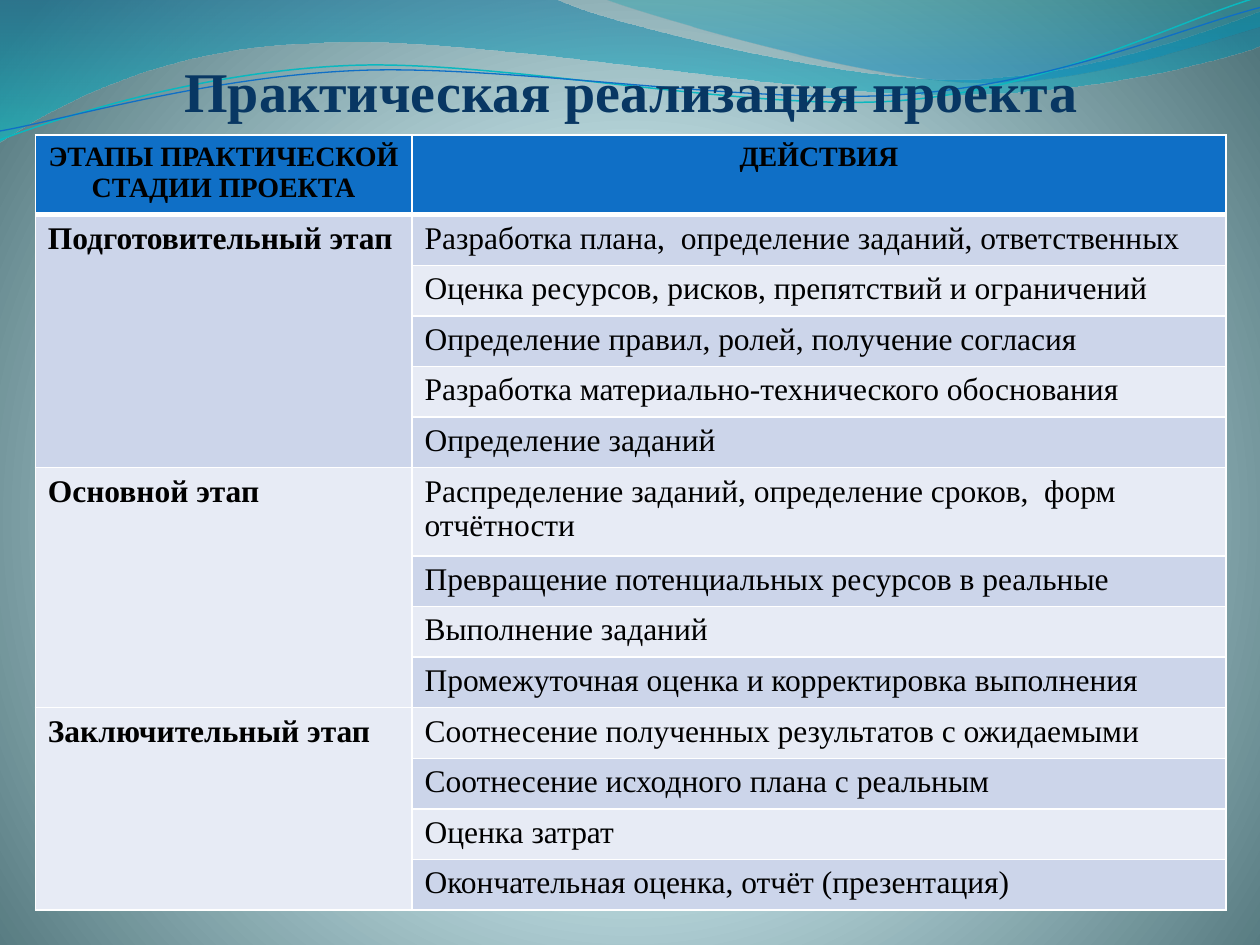
"""Build a slide with a table of project stages over a waved backdrop."""
from math import cos, radians, sin

from lxml import etree
from pptx import Presentation
from pptx.dml.color import RGBColor
from pptx.enum.text import MSO_ANCHOR, PP_ALIGN
from pptx.oxml import parse_xml
from pptx.oxml.ns import nsdecls, qn
from pptx.util import Inches, Pt

CENTER, LEFT = PP_ALIGN.CENTER, PP_ALIGN.LEFT
BOTTOM = MSO_ANCHOR.BOTTOM

TITLE = "Практическая реализация проекта"
HEADS = ("ЭТАПЫ ПРАКТИЧЕСКОЙ СТАДИИ ПРОЕКТА", "ДЕЙСТВИЯ")
STAGES = {
    "Подготовительный этап": (
        "Разработка плана,  определение заданий, ответственных",
        "Оценка ресурсов, рисков, препятствий и ограничений",
        "Определение правил, ролей, получение согласия",
        "Разработка материально-технического обоснования",
        "Определение заданий",
    ),
    "Основной этап": (
        "Распределение заданий, определение сроков,  форм отчётности",
        "Превращение потенциальных ресурсов в реальные",
        "Выполнение заданий",
        "Промежуточная оценка и корректировка выполнения",
    ),
    "Заключительный этап": (
        "Соотнесение полученных результатов с ожидаемыми",
        "Соотнесение исходного плана с реальным",
        "Оценка затрат",
        "Окончательная оценка, отчёт (презентация)",
    ),
}
THEME = {
    "font": "Times New Roman",
    "title": {"size": Pt(32), "bold": True, "color": "083763"},
    "head": {"size": Pt(16), "bold": True, "color": "000000"},
    "stage": {"size": Pt(18), "bold": True, "color": "000000"},
    "task": {"size": Pt(18), "bold": False, "color": "000000"},
    "fill": "0F6FC6",
    "bands": ("E7EBF5", "CCD5EA"),
    "rule": "FFFFFF",
    "back": ((0, "DEFBFF", 100), (25, "DDFAFF", 100), (100, "52767C", 100)),
}
WAVES = (
    {"start": (0, 0),
     "steps": ((4.4, -0.01), (4.76, 0.17, 6.64, 0.63, 7.58, 0.63),
               (8.53, 0.63, 9.58, 0.26, 10, 0.09), (10.01, 0.36),
               (9.83, 0.44, 8.7, 0.76, 7.46, 0.75),
               (6.22, 0.75, 3.82, 0.28, 2.57, 0.34),
               (1.29, 0.36, 0.46, 0.83, -0.01, 1.13), (0, 0)),
     "stops": ((0, "0074A1", 45), (100, "00C6CF", 55))},
    {"start": (4.79, -0.01),
     "steps": ((5.09, 0.11, 6.82, 0.62, 7.69, 0.65),
               (8.56, 0.69, 9.61, 0.32, 10, 0.21), (10, 0), (4.79, -0.01)),
     "stops": ((0, "00A1A9", 30), (80, "008BBF", 45))},
    {"start": (0, 1.11),
     "steps": ((0.48, 0.93, 1.58, 0.57, 2.77, 0.52),
               (3.95, 0.47, 5.93, 0.89, 7.13, 0.8),
               (8.33, 0.71, 9.38, 0.15, 9.98, -0.02)),
     "line": ("0AB8BF", 0.85), "hub": (4.99, 0.58)},
    {"start": (0, 1.04),
     "steps": ((0.47, 0.96, 1.64, 0.61, 2.83, 0.56),
               (4.03, 0.51, 5.97, 0.84, 7.17, 0.75),
               (8.36, 0.67, 9.41, 0.21, 10, 0.06)),
     "line": ("0F6FC6", 0.75), "hub": (5, 0.59)},
)
TILT = -2.7
COLS = (2.99, 6.46)
HEAD, TALL, FULL = 0.63, 0.7, 6.15
LINEAR = '<a:lin %s ang="5400000" scaled="0"/>' % nsdecls("a")
ROUND = ('<a:path %s path="circle"><a:fillToRect l="10000" t="110000" '
         'r="10000" b="100000"/></a:path>' % nsdecls("a"))


def blend(owner, fill, stops, shade):
    fill.gradient()
    grad = owner.element.find(".//" + qn("a:gradFill"))
    grad.clear()
    group = etree.SubElement(grad, qn("a:gsLst"))
    for place, color, alpha in stops:
        stop = etree.SubElement(group, qn("a:gs"), pos=str(place * 1000))
        tint = etree.SubElement(stop, qn("a:srgbClr"), val=color)
        if alpha < 100:
            etree.SubElement(tint, qn("a:alpha"), val=str(alpha * 1000))
    grad.append(parse_xml(shade))


def place(step, hub):
    turn = radians(-TILT) if hub else 0
    mid = hub or (0, 0)
    spots = []
    for x, y in zip(step[::2], step[1::2]):
        dx, dy = x - mid[0], y - mid[1]
        spots.append((Inches(mid[0] + dx * cos(turn) - dy * sin(turn)),
                      Inches(mid[1] + dx * sin(turn) + dy * cos(turn))))
    return spots


def bend(shape, steps):
    for node, spots in zip(list(shape.element.iter(qn("a:lnTo"))), steps):
        if len(spots) == 3:
            curve = etree.Element(qn("a:cubicBezTo"))
            for x, y in spots:
                etree.SubElement(curve, qn("a:pt"), x=str(x - shape.left),
                                 y=str(y - shape.top))
            node.getparent().replace(node, curve)


def wave(slide, start, steps, stops=None, line=None, hub=None):
    steps = [place(step, hub) for step in steps]
    form = slide.shapes.build_freeform(*place(start, hub)[0])
    form.add_line_segments([spots[-1] for spots in steps], close=bool(stops))
    shape = form.convert_to_shape()
    shape.shadow.inherit = False
    bend(shape, steps)
    if stops:
        blend(shape, shape.fill, stops, LINEAR)
        shape.line.fill.background()
    else:
        shape.rotation = TILT
        shape.fill.background()
        shape.line.color.rgb = RGBColor.from_string(line[0])
        shape.line.width = Pt(line[1])


def write(frame, text, style, align):
    para = frame.paragraphs[0]
    para.alignment = align
    run = para.add_run()
    run.text = text
    run.font.name = THEME["font"]
    for name, value in THEME[style].items():
        if name == "color":
            run.font.color.rgb = RGBColor.from_string(value)
        else:
            setattr(run.font, name, value)


def rule(cell, row):
    props = cell.fill._xPr
    sides = {"lnL": 1, "lnR": 1, "lnT": 3 if row == 1 else 1, "lnB": 1 if row else 3}
    for i, (side, width) in enumerate(sides.items()):
        props.insert(i, parse_xml(
            f'<a:{side} {nsdecls("a")} w="{Pt(width)}"><a:solidFill>'
            f'<a:srgbClr val="{THEME["rule"]}"/></a:solidFill></a:{side}>'))


def grid(slide):
    tasks = [task for group in STAGES.values() for task in group]
    main = 1 + len(STAGES["Подготовительный этап"])
    rows = [HEAD] + [(FULL - HEAD - TALL) / (len(tasks) - 1)] * len(tasks)
    rows[main] = TALL
    table = slide.shapes.add_table(
        len(rows), len(COLS), Inches(0.28), Inches(1.07),
        Inches(sum(COLS)), Inches(FULL)).table
    for col, width in zip(table.columns, COLS):
        col.width = Inches(width)
    first, bands = 1, {}
    for stage, group in STAGES.items():
        last = first + len(group) - 1
        table.cell(first, 0).merge(table.cell(last, 0))
        write(table.cell(first, 0).text_frame, stage, "stage", LEFT)
        bands.update({r: first % 2 for r in range(first, last + 1)})
        first = last + 1
    for r, height in enumerate(rows):
        table.rows[r].height = Inches(height)
        for c in range(len(COLS)):
            cell = table.cell(r, c)
            band = r % 2 if c else bands.get(r, 0)
            tone = THEME["bands"][band] if r else THEME["fill"]
            cell.fill.solid()
            cell.fill.fore_color.rgb = RGBColor.from_string(tone)
            rule(cell, r)
            if r == 0:
                write(cell.text_frame, HEADS[c], "head", CENTER)
            elif c:
                write(cell.text_frame, tasks[r - 1], "task", LEFT)


def main():
    deck = Presentation()
    deck.slide_width, deck.slide_height = Inches(10), Inches(7.5)
    slide = deck.slides.add_slide(deck.slide_layouts[6])
    blend(slide, slide.background.fill, THEME["back"], ROUND)
    for item in WAVES:
        wave(slide, **item)
    frame = slide.shapes.add_textbox(
        Inches(0.51), Inches(0.36), Inches(9), Inches(0.62)).text_frame
    form = {"word_wrap": True, "vertical_anchor": BOTTOM, "margin_left": 0,
            "margin_top": Inches(0.05), "margin_right": 0, "margin_bottom": 0}
    for name, value in form.items():
        setattr(frame, name, value)
    write(frame, TITLE, "title", CENTER)
    grid(slide)
    deck.save("out.pptx")


if __name__ == "__main__":
    main()
